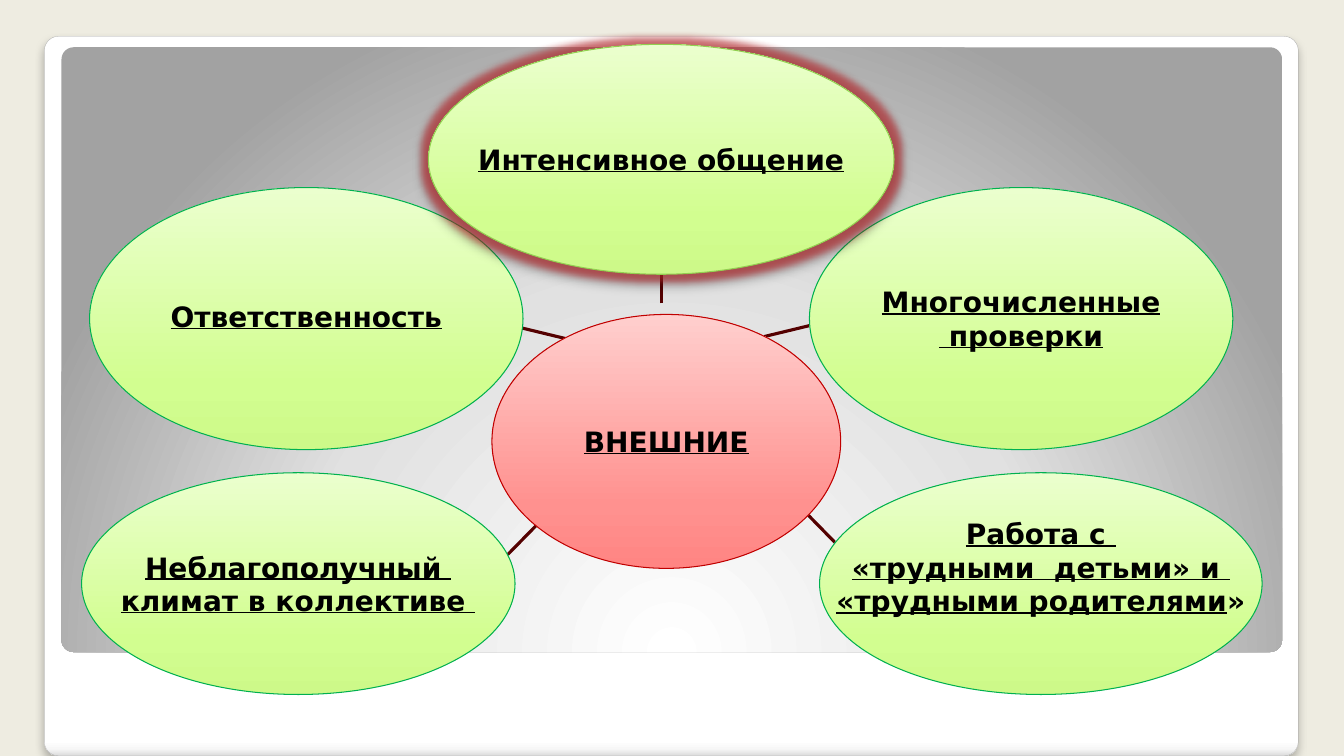
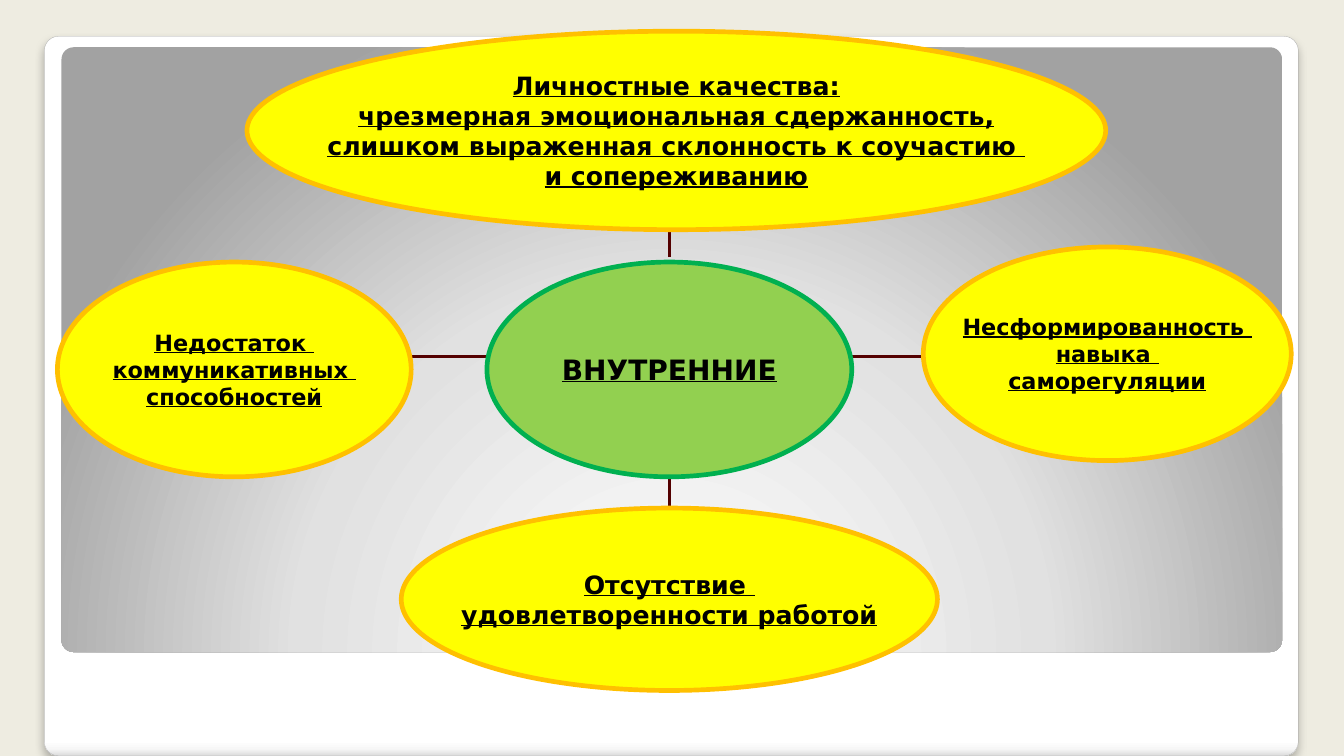
from lxml.etree import SubElement
from pptx import Presentation
from pptx.dml.color import RGBColor
from pptx.enum.shapes import MSO_CONNECTOR, MSO_SHAPE
from pptx.enum.text import MSO_ANCHOR, PP_ALIGN
from pptx.oxml.ns import qn
from pptx.util import Pt

COLORS = {
    "background": "EEECE1", "frame line": "A4A4A4", "link": "540000", "text": "000000",
    "green": "00B050", "light green": "92D050", "red": "C00000", "amber": "FFC000",
    "yellow": "FFFF00", "glow": "C0282D", "shadow": "000000",
}
FONT = {"name": "DejaVu Sans", "bold": True}

# Gradient stops are (percent, colour); a direction is in degrees.
GRADIENTS = {
    "frame": {"stops": [(0, "FFFFFF"), (98, "FFFFFF"), (99, "F7F7F7"), (100, "DADADA")],
              "angle": 90},
    "panel": {"stops": [(0, "FFFFFF"), (55, "E1E1E1"), (100, "A2A2A2")],
              "center": {"l": 50, "t": 175, "r": 50, "b": -75}},
    "lime": {"stops": [(0, "CDF989"), (25, "D2FE90"), (100, "EBFFCE")], "angle": 270},
    "rose": {"stops": [(0, "FF8583"), (25, "FF918F"), (100, "FFCFCE")], "angle": 270},
}
FRAME_SHADOW = {"alpha": 25, "blur": 6, "distance": 4}
FACTOR_SHADOW = {"alpha": 40, "blur": 5.2, "distance": 3}
GLOW = {"alpha": 60, "radius": 10}

STYLES = {
    "external": {"fill": "lime", "line": "green", "width": 0.75},
    "highlight": {"fill": "lime", "line": "light green", "width": 0.75},
    "external core": {"fill": "rose", "line": "red", "width": 0.75},
    "internal": {"fill": "yellow", "line": "amber", "width": 3.35},
    "internal core": {"fill": "light green", "line": "green", "width": 3.35},
}

# A line of text is a string, or (underlined part, plain part).
SLIDES = [
    {
        "links": [(419, 245.5, 365.8, 232.6), (391.7, 366.5, 358.6, 400.3),
                  (570.2, 360.7, 603.4, 394.6), (524.9, 245.5, 578.2, 232.6),
                  (472.3, 216.7, 472.3, 175)],
        "ovals": [
            {"box": (64, 134, 309.6, 187.2), "style": "external", "size": 20,
             "bottom": 7, "lines": ["Ответственность"]},
            {"box": (58.3, 337.7, 309.6, 158.4), "style": "external", "size": 20,
             "lines": ["Неблагополучный ", "климат в коллективе "]},
            {"box": (585.4, 337.7, 316.1, 158.4), "style": "external", "size": 20,
             "bottom": 27, "lines": ["Работа с ", "«трудными  детьми» и ",
                                     ("«трудными родителями", "»")]},
            {"box": (578.2, 134, 302.4, 187.2), "style": "external", "size": 20,
             "lines": ["Многочисленные", " проверки"]},
            {"box": (306, 31.7, 332.6, 164.2), "style": "highlight", "size": 20,
             "lines": ["Интенсивное общение"]},
            {"box": (351.4, 224.6, 249.1, 181.4), "style": "external core", "size": 20,
             "lines": ["ВНЕШНИЕ"]},
        ],
    },
    {
        "links": [(350.6, 254.9, 293.8, 254.9), (478.1, 328.3, 478.1, 370.8),
                  (607.7, 254.9, 664.6, 254.9), (478.1, 183.6, 478.1, 141.8)],
        "ovals": [
            {"box": (41, 187.2, 252.7, 153.4), "style": "internal", "size": 16,
             "lines": ["Недостаток ", "коммуникативных ", "способностей"]},
            {"box": (286.6, 362.9, 383, 130.3), "style": "internal", "size": 18,
             "lines": ["Отсутствие ", "удовлетворенности работой"]},
            {"box": (659.5, 176.4, 262.8, 152.6), "style": "internal", "size": 16,
             "lines": ["Несформированность ", "навыка ", "саморегуляции"]},
            {"box": (176.4, 22.3, 613.4, 141.8), "style": "internal", "size": 18,
             "lines": ["Личностные качества:", "чрезмерная эмоциональная сдержанность,",
                       "слишком выраженная склонность к соучастию ", "и сопереживанию"]},
            {"box": (347.8, 187.2, 260.6, 153.4), "style": "internal core", "size": 20,
             "lines": ["ВНУТРЕННИЕ"]},
        ],
    },
]


def rgb(name):
    return RGBColor.from_string(COLORS[name])


def add_element(parent, tag, **attributes):
    return SubElement(parent, qn(tag), {key: str(value) for key, value in attributes.items()})


def set_gradient(shape, stops, angle=None, center=None):
    """Fill with any number of stops, along an angle or around a centre."""
    shape.fill.background()
    placeholder_fill = shape.element.spPr.find(qn("a:noFill"))
    gradient = add_element(shape.element.spPr, "a:gradFill", rotWithShape=1)
    stop_list = add_element(gradient, "a:gsLst")
    for percent, color in stops:
        stop = add_element(stop_list, "a:gs", pos=percent * 1000)
        add_element(stop, "a:srgbClr", val=color)
    if center:
        circle = add_element(gradient, "a:path", path="circle")
        add_element(circle, "a:fillToRect",
                    **{side: percent * 1000 for side, percent in center.items()})
    else:
        add_element(gradient, "a:lin", ang=angle * 60000, scaled=0)
    shape.element.spPr.replace(placeholder_fill, gradient)


def add_effect(shape, tag, color, alpha, **attributes):
    effects = shape.element.spPr.find(qn("a:effectLst"))
    effect = add_element(effects, tag, **attributes)
    color_element = add_element(effect, "a:srgbClr", val=COLORS[color])
    add_element(color_element, "a:alpha", val=alpha * 1000)


def add_shadow(shape, alpha, blur, distance):
    add_effect(shape, "a:outerShdw", "shadow", alpha, blurRad=int(Pt(blur)),
               dist=int(Pt(distance)), dir=5400000, rotWithShape=0)


def add_filled_shape(slide, kind, box, fill, line=None, width=0):
    shape = slide.shapes.add_shape(kind, *map(Pt, box))
    shape.shadow.inherit = False
    if fill in GRADIENTS:
        set_gradient(shape, **GRADIENTS[fill])
    else:
        shape.fill.solid()
        shape.fill.fore_color.rgb = rgb(fill)
    if line:
        shape.line.color.rgb = rgb(line)
        shape.line.width = Pt(width)
    else:
        shape.line.fill.background()
    return shape


def write_lines(shape, lines, size, bottom):
    frame = shape.text_frame
    settings = {"word_wrap": False, "vertical_anchor": MSO_ANCHOR.MIDDLE,
                "margin_bottom": Pt(bottom)}
    for name, value in settings.items():
        setattr(frame, name, value)
    for index, line in enumerate(lines):
        paragraph = frame.add_paragraph() if index else frame.paragraphs[0]
        paragraph.alignment = PP_ALIGN.CENTER
        parts = (line,) if isinstance(line, str) else line
        for part, underline in zip(parts, (True, False)):
            run = paragraph.add_run()
            run.text = part
            for name, value in {**FONT, "size": Pt(size), "underline": underline}.items():
                setattr(run.font, name, value)
            run.font.color.rgb = rgb("text")


def add_oval(slide, box, style, size, lines, bottom=3.6):
    oval = add_filled_shape(slide, MSO_SHAPE.OVAL, box, **STYLES[style])
    if style == "highlight":
        add_effect(oval, "a:glow", "glow", GLOW["alpha"], rad=int(Pt(GLOW["radius"])))
        add_shadow(oval, **FACTOR_SHADOW)
    write_lines(oval, lines, size, bottom)


def add_link(slide, ends):
    link = slide.shapes.add_connector(MSO_CONNECTOR.STRAIGHT, *map(Pt, ends))
    link.line.color.rgb = rgb("link")
    link.line.width = Pt(2.25)
    add_element(link.element.spPr, "a:effectLst")


def move_frame_to_layout(slide, layout):
    """Draw the shared frame, then hand its shapes over to the layout."""
    for placeholder in list(layout.placeholders):
        layout.shapes.element.remove(placeholder.element)
    frame = add_filled_shape(slide, MSO_SHAPE.ROUNDED_RECTANGLE, (31.7, 25.9, 895.7, 514.1),
                             "frame", "frame line", 0.16)
    add_shadow(frame, **FRAME_SHADOW)
    panel = add_filled_shape(slide, MSO_SHAPE.ROUNDED_RECTANGLE, (43.9, 33.8, 871.9, 432),
                             "panel")
    for shape in (frame, panel):
        shape.adjustments[0] = 0.02
        layout.shapes.element.append(shape.element)


def main():
    presentation = Presentation()
    presentation.slide_width, presentation.slide_height = Pt(960), Pt(540)
    layout = presentation.slide_layouts[6]
    layout.background.fill.solid()
    layout.background.fill.fore_color.rgb = rgb("background")
    slides = [presentation.slides.add_slide(layout) for _ in SLIDES]
    move_frame_to_layout(slides[0], layout)
    for slide, content in zip(slides, SLIDES):
        for ends in content["links"]:
            add_link(slide, ends)
        for oval in content["ovals"]:
            add_oval(slide, **oval)
    presentation.save("out.pptx")


if __name__ == "__main__":
    main()
